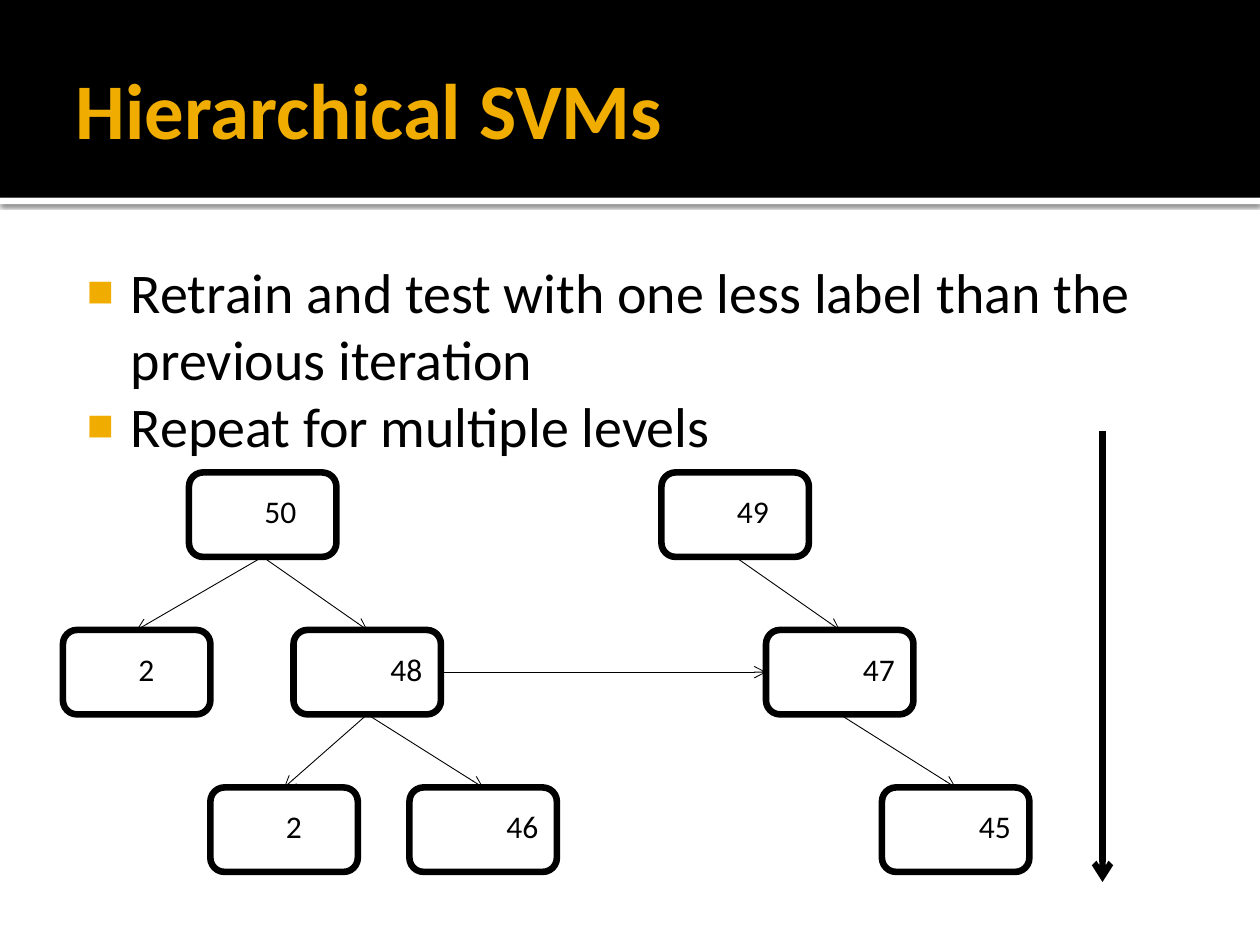
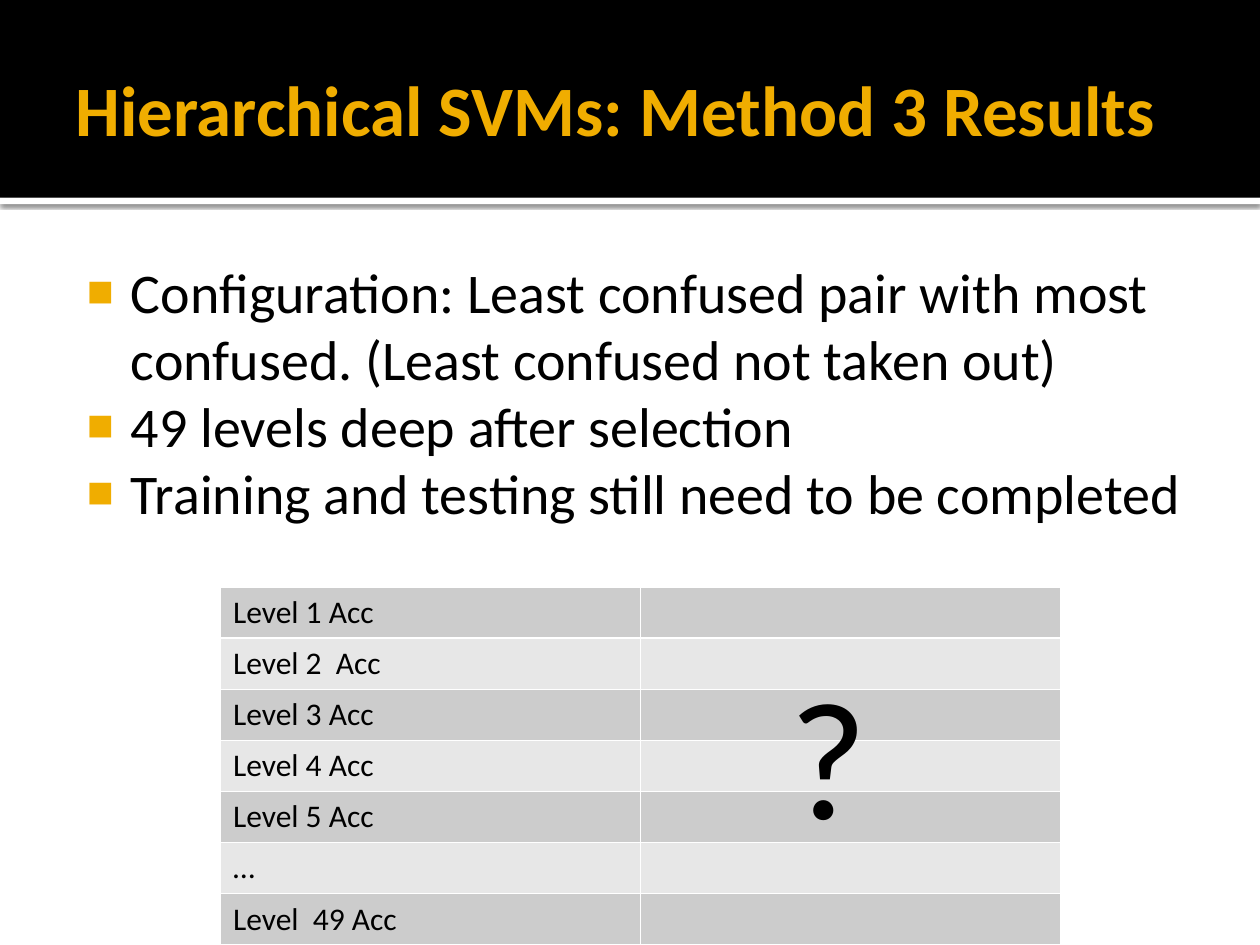
from lxml import etree
from pptx import Presentation
from pptx.dml.color import RGBColor as Color
from pptx.enum.shapes import MSO_CONNECTOR as Connector, MSO_SHAPE as Shape
from pptx.enum.text import MSO_ANCHOR as Anchor, MSO_AUTO_SIZE as AutoSize, PP_ALIGN as Align
from pptx.oxml import parse_xml
from pptx.oxml.ns import nsdecls, qn
from pptx.util import Inches, Pt

COLORS = {
    "ink": "000000",
    "paper": "FFFFFF",
    "accent": "F0AD00",
    "dark_row": "CCCCCC",
    "light_row": "E7E7E7",
}
RGB = {name: Color.from_string(value) for name, value in COLORS.items()}

TITLE_FRAME = {
    "margin_left": Inches(0.1), "margin_top": Inches(0.05),
    "margin_right": Inches(0.05), "margin_bottom": Inches(0.05),
    "vertical_anchor": Anchor.MIDDLE, "word_wrap": True, "auto_size": AutoSize.NONE,
}
BODY_FRAME = {
    "margin_left": Inches(0.06), "margin_top": Inches(0.1),
    "margin_right": Inches(0.1), "margin_bottom": Inches(0.05), "word_wrap": True,
}
LABEL_FRAME = {"word_wrap": True, "auto_size": AutoSize.SHAPE_TO_FIT_TEXT}
TITLE_PLACE = {
    "left": Inches(0.5), "top": Inches(0.17), "width": Inches(9), "height": Inches(1.37),
}
BANDS = [("paper", 1.57, 0.05), ("ink", 0, 1.57)]
SHADOW = (
    f'<a:effectLst {nsdecls("a")}><a:outerShdw blurRad="{Pt(2.5)}" dist="{Pt(0.8)}" '
    f'dir="5400000" rotWithShape="0"><a:srgbClr val="{COLORS["ink"]}">'
    '<a:alpha val="60000"/></a:srgbClr></a:outerShdw></a:effectLst>'
)
BULLET = [
    f'<a:buClr {nsdecls("a")}><a:srgbClr val="{COLORS["accent"]}"/></a:buClr>',
    f'<a:buSzPct {nsdecls("a")} val="80000"/>',
    f'<a:buFont {nsdecls("a")} typeface="Arial"/>',
    f'<a:buChar {nsdecls("a")} char="■"/>',
]


def write_text(frame, lines, size, frame_format={}, color="ink", bold=False):
    for name, value in frame_format.items():
        setattr(frame, name, value)
    for index, line in enumerate(lines):
        para = frame.add_paragraph() if index else frame.paragraphs[0]
        para.alignment = Align.LEFT
        span = para.add_run()
        span.text = line
        for name, value in {"name": "Calibri", "size": Pt(size), "bold": bold}.items():
            setattr(span.font, name, value)
        span.font.color.rgb = RGB[color]


def add_arrow(page, start, end, weight=0.5):
    arrow = page.shapes.add_connector(
        Connector.STRAIGHT, *[Inches(value) for value in (*start, *end)])
    arrow.line.color.rgb = RGB["ink"]
    arrow.line.width = Pt(weight)
    etree.SubElement(arrow.line._get_or_add_ln(), qn("a:tailEnd"), type="arrow")
    etree.SubElement(arrow.element.spPr, qn("a:effectLst"))


deck = Presentation()
deck.slide_width = Inches(10)
deck.slide_height = Inches(7.5)

contents = [
    ("Hierarchical SVMs", 45, [
        "Retrain and test with one less label than the previous iteration",
        "Repeat for multiple levels",
    ]),
    ("Hierarchical SVMs: Method 3 Results", 40.5, [
        "Configuration: Least confused pair with most confused. (Least confused not taken out)",
        "49 levels deep after selection",
        "Training and testing still need to be completed",
    ]),
]
for heading, heading_size, bullets in contents:
    page = deck.slides.add_slide(deck.slide_layouts[5])
    title = page.shapes.title
    for name, value in TITLE_PLACE.items():
        setattr(title, name, value)
    write_text(title.text_frame, [heading], heading_size, TITLE_FRAME, "accent", True)

    for color, top, height in BANDS:
        band = page.shapes.add_shape(
            Shape.RECTANGLE, 0, Inches(top), deck.slide_width, Inches(height))
        band.fill.solid()
        band.fill.fore_color.rgb = RGB[color]
        band.line.fill.background()
        if color == "paper":
            band.element.spPr.append(parse_xml(SHADOW))
        else:
            band.shadow.inherit = False
        title.element.addprevious(band.element)

    body = page.shapes.add_textbox(Inches(0.5), Inches(1.94), Inches(9), Inches(5.06))
    write_text(body.text_frame, bullets, 32, BODY_FRAME)
    for para in body.text_frame.paragraphs:
        settings = para._p.get_or_add_pPr()
        settings.set("marL", str(Inches(0.48)))
        settings.set("indent", str(Inches(-0.35)))
        for part in BULLET:
            settings.append(parse_xml(part))

tree_page, results_page = deck.slides

NODE_WIDTH, NODE_HEIGHT = 1.17, 0.67
LEVEL_TOPS = [3.75 + 1.25 * level for level in range(3)]
nodes = {
    "root": ("50", 1.5, 0, 0.5, 0.52),
    "root pair": ("2", 0.5, 1, 0.5, 0.39),
    "root rest": ("48", 2.33, 1, 0.67, 0.58),
    "rest pair": ("2", 1.67, 2, 0.5, 0.39),
    "rest rest": ("46", 3.25, 2, 0.67, 0.58),
    "retrained": ("49", 5.25, 0, 0.5, 0.52),
    "retrained rest": ("47", 6.08, 1, 0.67, 0.58),
    "retrained last": ("45", 7, 2, 0.67, 0.58),
}
branches = [
    ("root", "root pair"), ("root", "root rest"),
    ("root rest", "rest pair"), ("root rest", "rest rest"),
    ("retrained", "retrained rest"), ("retrained rest", "retrained last"),
]
for label, left, level, label_offset, label_width in nodes.values():
    top = LEVEL_TOPS[level]
    box = tree_page.shapes.add_shape(
        Shape.ROUNDED_RECTANGLE, Inches(left), Inches(top),
        Inches(NODE_WIDTH), Inches(NODE_HEIGHT))
    box.shadow.inherit = False
    box.fill.solid()
    box.fill.fore_color.rgb = RGB["paper"]
    box.line.color.rgb = RGB["ink"]
    box.line.width = Pt(3.78)
    caption = tree_page.shapes.add_textbox(
        Inches(left + label_offset), Inches(top + 0.11), Inches(label_width), Inches(0.4))
    write_text(caption.text_frame, [label], 18, LABEL_FRAME)

for parent, child in branches:
    parent_left, parent_level = nodes[parent][1:3]
    child_left, child_level = nodes[child][1:3]
    add_arrow(tree_page,
              (parent_left + NODE_WIDTH / 2, LEVEL_TOPS[parent_level] + NODE_HEIGHT),
              (child_left + NODE_WIDTH / 2, LEVEL_TOPS[child_level]))
middle = LEVEL_TOPS[1] + NODE_HEIGHT / 2
add_arrow(tree_page, (nodes["root rest"][1] + NODE_WIDTH, middle),
          (nodes["retrained rest"][1], middle))
add_arrow(tree_page, (8.75, 3.42), (8.75, 7), 3.5)

levels = ["Level 1 Acc", "Level 2  Acc", "Level 3 Acc", "Level 4 Acc",
          "Level 5 Acc", "…", "Level  49 Acc"]
table = results_page.shapes.add_table(
    len(levels), 2, Inches(1.75), Inches(4.66), Inches(6.67), Inches(2.84)).table
table.first_row = False
table.horz_banding = False
for index, level in enumerate(levels):
    for cell, text in zip(table.rows[index].cells, (level, "")):
        if text:
            write_text(cell.text_frame, [text], 18)
        for side in ("lnL", "lnR", "lnT", "lnB"):
            cell._tc.get_or_add_tcPr().append(parse_xml(
                f'<a:{side} {nsdecls("a")} w="{Pt(1)}"><a:solidFill>'
                f'<a:srgbClr val="{COLORS["paper"]}"/></a:solidFill></a:{side}>'))
        cell.fill.solid()
        cell.fill.fore_color.rgb = RGB["light_row" if index % 2 else "dark_row"]

question = results_page.shapes.add_textbox(
    Inches(6.17), Inches(5.12), Inches(3.33), Inches(1.72))
write_text(question.text_frame, ["?"], 96, LABEL_FRAME)

deck.save("out.pptx")
